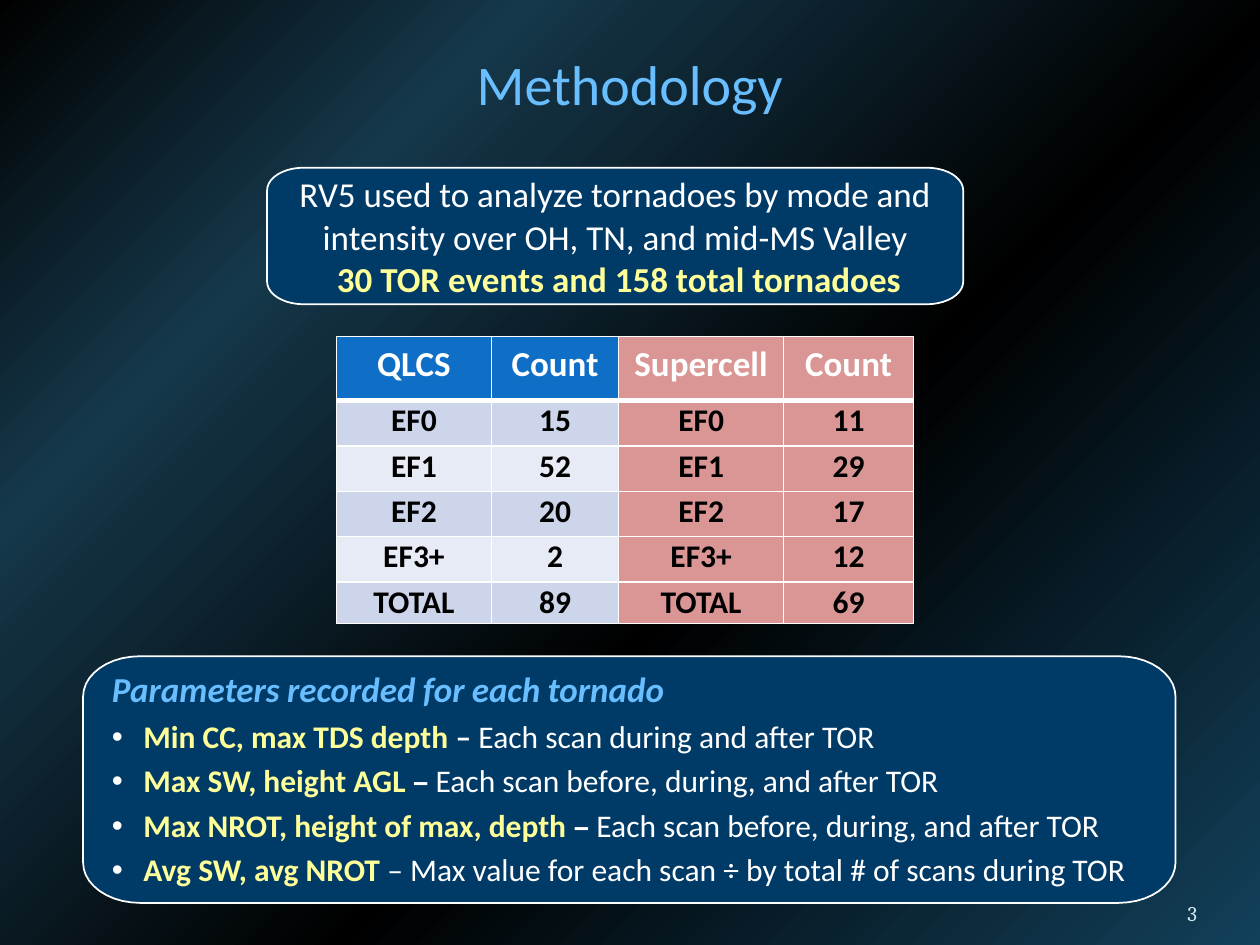
from math import cos, pi, sin

from lxml.etree import SubElement
from pptx import Presentation
from pptx.dml.color import RGBColor
from pptx.enum.text import MSO_ANCHOR as Anchor, MSO_AUTO_SIZE as AutoSize, PP_ALIGN as Align
from pptx.oxml.ns import qn
from pptx.util import Emu, Inches, Pt

WHITE, NAVY, SKY, YELLOW = "FFFFFF", "003B68", "69BEFF", "FFFF99"
BLUE, ROSE, BANDS = "0F6FC6", "D99694", ("CCD5EA", "E7EBF5")

prs = Presentation()
prs.slide_width, prs.slide_height = Inches(10), Inches(7.5)


def rgb(value):
    return RGBColor.from_string(value)


def box(left, top, width, height):
    """Turn percentages of the slide into lengths."""
    w, h = prs.slide_width, prs.slide_height
    return [Emu(round(share * side / 100))
            for share, side in zip((left, top, width, height), (w, h, w, h))]


def node(parent, tag, **attrs):
    child = SubElement(parent, qn(tag))
    for name, value in attrs.items():
        child.set(name, str(value))
    return child


def add_run(p, text, size, color=WHITE, name="Calibri", **look):
    r = p.add_run()
    r.text = text
    r.font.color.rgb = rgb(color)
    for key, value in {"size": Pt(size), "name": name, **look}.items():
        setattr(r.font, key, value)


def set_frame(tf, inset=None, **look):
    for key, value in {"word_wrap": True, **look}.items():
        setattr(tf, key, value)
    if inset is not None:
        for side in ("left", "top", "right", "bottom"):
            setattr(tf, f"margin_{side}", Inches(inset))


def paragraphs(tf, count):
    return [tf.paragraphs[0]] + [tf.add_paragraph() for _ in range(count - 1)]


def add_background(s):
    s.background.fill.gradient()
    grad = s._element.find(".//" + qn("a:gradFill"))
    for child in list(grad):
        grad.remove(child)
    stops = node(grad, "a:gsLst")
    for pos, color in ((0, "12405A"), (42, "000000"), (69, "112C3B"),
                       (76, "15384B"), (100, "000000")):
        node(node(stops, "a:gs", pos=pos * 1000), "a:srgbClr", val=color)
    node(node(grad, "a:path", path="circle"), "a:fillToRect", l=100000, t=100000, r=0, b=0)


def add_panel(s, area, rx, ry, steps=10):
    """Panel with elliptical corners of radii rx and ry."""
    x, y, w, h = area
    centres = ((x + w - rx, y + h - ry), (x + rx, y + h - ry),
               (x + rx, y + ry), (x + w - rx, y + ry))
    points = []
    for quarter, (cx, cy) in enumerate(centres):
        for step in range(steps + 1):
            angle = (quarter + step / steps) * pi / 2
            points.append((round(cx + rx * cos(angle)), round(cy + ry * sin(angle))))
    builder = s.shapes.build_freeform(*points[0])
    builder.add_line_segments(points[1:], close=True)
    sp = builder.convert_to_shape()
    sp.shadow.inherit = False
    sp.fill.solid()
    sp.fill.fore_color.rgb = rgb(NAVY)
    sp.line.color.rgb = rgb(WHITE)
    sp.line.width = Pt(1)
    return sp


def add_title(s, area):
    sp = s.shapes.title
    sp.left, sp.top, sp.width, sp.height = area
    set_frame(sp.text_frame, vertical_anchor=Anchor.TOP, auto_size=AutoSize.NONE)
    p = sp.text_frame.paragraphs[0]
    p.alignment = Align.CENTER
    add_run(p, "Methodology", 32, SKY)


def add_summary(s, area):
    tf = add_panel(s, area, Inches(0.29), Inches(0.18)).text_frame
    set_frame(tf, 0.05, vertical_anchor=Anchor.MIDDLE)
    first, second = paragraphs(tf, 2)
    first.alignment = second.alignment = Align.CENTER
    add_run(first, "RV5 used to analyze tornadoes by mode and intensity "
                   "over OH, TN, and mid-MS Valley", 20)
    add_run(second, " 30 TOR events and 158 total tornadoes", 20, YELLOW, bold=True)


def set_borders(cell, bottom):
    tc_pr = cell._tc.get_or_add_tcPr()
    for i, (tag, width) in enumerate((("a:lnL", 1), ("a:lnR", 1), ("a:lnT", 1), ("a:lnB", bottom))):
        ln = node(tc_pr, tag, w=Pt(width))
        node(node(ln, "a:solidFill"), "a:srgbClr", val=WHITE)
        tc_pr.insert(i, ln)  # borders come before the fill


def add_counts(s, area):
    rows = [("QLCS", "Count", "Supercell", "Count"),
            ("EF0", 15, "EF0", 11), ("EF1", 52, "EF1", 29), ("EF2", 20, "EF2", 17),
            ("EF3+", 2, "EF3+", 12), ("TOTAL", 89, "TOTAL", 69)]
    table = s.shapes.add_table(len(rows), 4, *area).table
    for col, width in zip(table.columns, (1.23, 1.01, 1.31, 1.03)):
        col.width = Inches(width)
    for row, height in zip(table.rows, (0.51, 0.36, 0.36, 0.36, 0.36, 0.33)):
        row.height = Inches(height)
    for i, values in enumerate(rows):
        head = i == 0
        for j, value in enumerate(values):
            cell = table.cell(i, j)
            cell.fill.solid()
            left_fill = BLUE if head else BANDS[(i - 1) % 2]
            cell.fill.fore_color.rgb = rgb(left_fill if j < 2 else ROSE)
            if not head:
                cell.margin_left = cell.margin_right = Inches(0.02)
                cell.margin_top = cell.margin_bottom = Inches(0.01)
            set_borders(cell, 3 if head else 1)
            p = cell.text_frame.paragraphs[0]
            p.alignment = Align.CENTER
            add_run(p, str(value), 20 if head else 18, WHITE if head else "000000", bold=True)


def add_bullet(p):
    p_pr = p._p.get_or_add_pPr()
    p_pr.set("marL", str(Inches(0.25)))
    p_pr.set("indent", str(-Inches(0.25)))
    node(node(p_pr, "a:buClr"), "a:srgbClr", val=WHITE)
    node(p_pr, "a:buFont", typeface="Arial")
    node(p_pr, "a:buChar", char="•")


def add_parameters(s, area, text_area):
    add_panel(s, area, Inches(0.45), Inches(0.32))
    tf = s.shapes.add_textbox(*text_area).text_frame
    set_frame(tf, auto_size=AutoSize.SHAPE_TO_FIT_TEXT)
    # Parameter, dash format, explanation
    bold_dash, serif_dash = {"bold": True}, {"bold": True, "name": "Cambria"}
    items = [("Min CC, max TDS depth ", bold_dash, "Each scan during and after TOR"),
             ("Max SW, height AGL ", serif_dash, "Each scan before, during, and after TOR"),
             ("Max NROT, height of max, depth ", serif_dash,
              "Each scan before, during, and after TOR"),
             ("Avg SW, avg NROT ", {},
              "Max value for each scan ÷ by total # of scans during TOR")]
    heading, *lines = paragraphs(tf, len(items) + 1)
    for p in (heading, *lines):
        p.line_spacing, p.space_after = 0.9, Pt(6)
    for i, word in enumerate("Parameters recorded for each tornado".split()):
        if i:
            add_run(heading, " ", 18, SKY)
        add_run(heading, word, 20, SKY, bold=True, italic=True)
    for p, (name, dash, text) in zip(lines, items):
        add_bullet(p)
        add_run(p, name, 18, YELLOW, bold=True)
        add_run(p, "– ", 18, **dash)
        add_run(p, text, 18)


def add_number(s, area):
    tf = s.shapes.add_textbox(*area).text_frame
    set_frame(tf, 0, vertical_anchor=Anchor.BOTTOM)
    p = tf.paragraphs[0]
    p.alignment = Align.RIGHT
    add_run(p, "3", 12, "D1EAEE", "Cambria")


def main():
    s = prs.slides.add_slide(prs.slide_layouts[5])
    add_background(s)
    add_number(s, box(86.7, 92.67, 8.3, 5.33))
    add_summary(s, box(21.2, 17.75, 55.25, 14.45))
    add_title(s, box(12.5, 4.53, 75, 8.53))
    add_counts(s, box(26.7, 35.6, 45.8, 30.4))
    add_parameters(s, box(6.6, 69.45, 86.7, 26.1), box(7.9, 70.53, 85, 24.4))
    prs.save("out.pptx")


if __name__ == "__main__":
    main()
